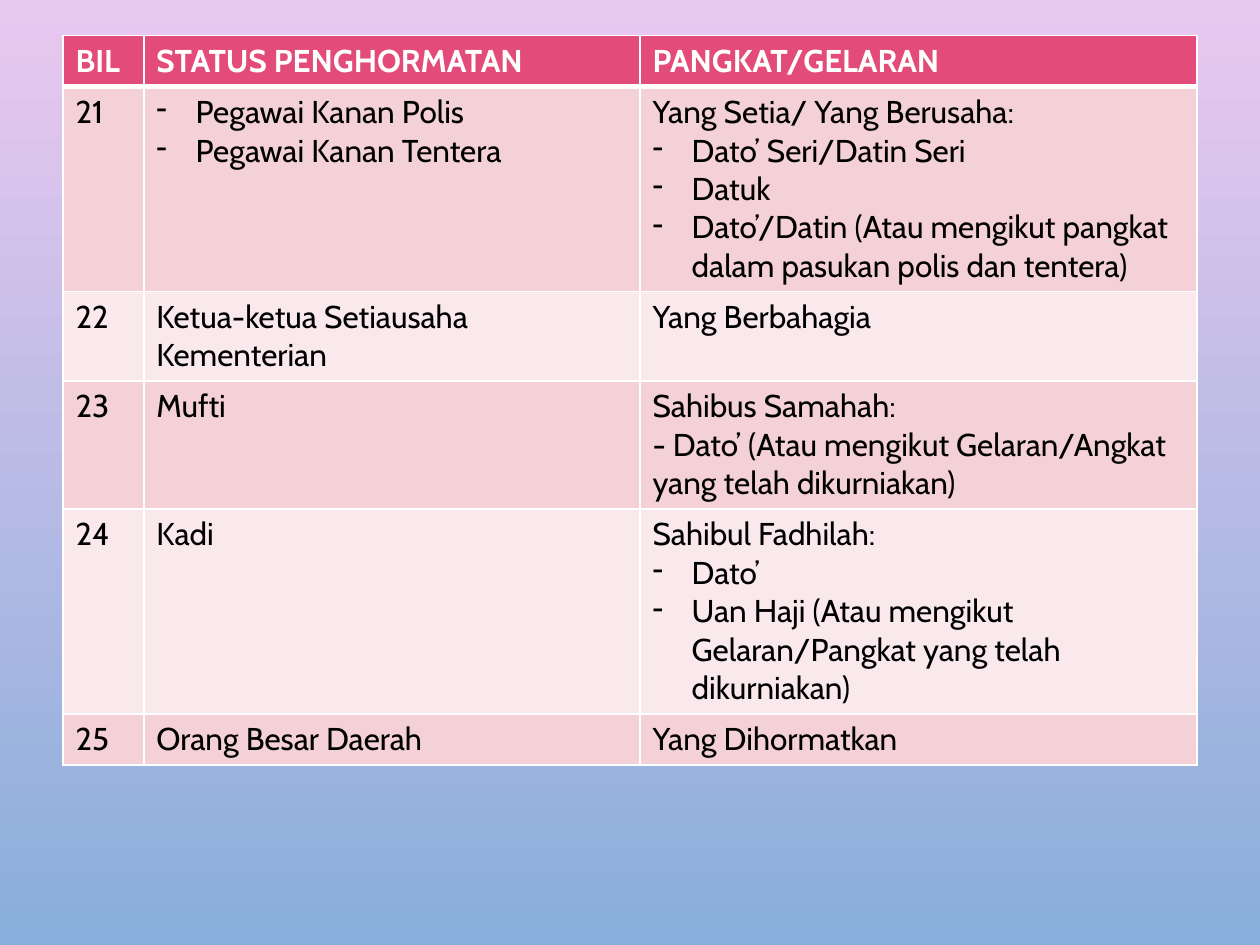
from dataclasses import dataclass

from lxml.etree import SubElement
from pptx import Presentation
from pptx.dml.color import RGBColor
from pptx.oxml.ns import qn
from pptx.slide import Slide
from pptx.util import Cm, Pt

WHITE = RGBColor(0xFF, 0xFF, 0xFF)
BLACK = RGBColor(0x00, 0x00, 0x00)
HEADER_PINK = RGBColor(0xE3, 0x4B, 0x7A)
ROW_PINKS = [RGBColor(0xF4, 0xD0, 0xD7), RGBColor(0xFA, 0xE9, 0xEC)]
SKY_PINK = RGBColor(0xE9, 0xC8, 0xEF)
SKY_BLUE = RGBColor(0x89, 0xAE, 0xDB)

BULLET = "• "  # marks a line to be drawn as a dash list item
HEADINGS = ["BIL", "STATUS PENGHORMATAN", "PANGKAT/GELARAN"]
RANKS = [
    [["21"],
     [BULLET + "Pegawai Kanan Polis", BULLET + "Pegawai Kanan Tentera"],
     ["Yang Setia/ Yang Berusaha:",
      BULLET + "Dato’ Seri/Datin Seri",
      BULLET + "Datuk",
      BULLET + "Dato’/Datin (Atau mengikut pangkat dalam pasukan polis dan tentera)"]],
    [["22"], ["Ketua-ketua Setiausaha Kementerian"], ["Yang Berbahagia"]],
    [["23"], ["Mufti"],
     ["Sahibus Samahah:",
      "- Dato’ (Atau mengikut Gelaran/Angkat yang telah dikurniakan)"]],
    [["24"], ["Kadi"],
     ["Sahibul Fadhilah:",
      BULLET + "Dato’",
      BULLET + "Uan Haji (Atau mengikut Gelaran/Pangkat yang telah dikurniakan)"]],
    [["25"], ["Orang Besar Daerah"], ["Yang Dihormatkan"]],
]


@dataclass
class SlideBuilder:
    slide: Slide
    font_name: str = "Cabin"
    font_size: int = 18

    def background(self, top_color, bottom_color):
        fill = self.slide.background.fill
        fill.gradient()
        fill.gradient_angle = 270
        for stop, color, position in zip(fill.gradient_stops, (top_color, bottom_color), (0, 1)):
            stop.color.rgb = color
            stop.position = position

    def table(self, headings, rows, left, top, height, column_widths, row_height):
        frame = self.slide.shapes.add_table(
            len(rows) + 1, len(headings), left, top, sum(column_widths), height)
        table = frame.table
        for column, width in zip(table.columns, column_widths):
            column.width = width
        for row in table.rows:
            row.height = row_height
        frame.height = height  # rows grow with their text
        for index, heading in enumerate(headings):
            self.cell(table.cell(0, index), [heading], HEADER_PINK, WHITE, bold=True, bottom=3)
        for row_index, row in enumerate(rows):
            for index, lines in enumerate(row):
                self.cell(table.cell(row_index + 1, index), lines, ROW_PINKS[row_index % 2],
                          BLACK, top=1 if row_index else 3)

    def cell(self, cell, lines, fill_color, text_color, bold=False, top=1, bottom=1):
        self.borders(cell, {"a:lnL": 1, "a:lnR": 1, "a:lnT": top, "a:lnB": bottom})
        cell.fill.solid()
        cell.fill.fore_color.rgb = fill_color
        text_frame = cell.text_frame
        for index, line in enumerate(lines):
            paragraph = text_frame.add_paragraph() if index else text_frame.paragraphs[0]
            paragraph.text = line.removeprefix(BULLET)
            if line.startswith(BULLET):
                self.dash_bullet(paragraph)
            font = paragraph.font
            font.name = self.font_name
            font.size = Pt(self.font_size)
            font.bold = bold
            font.color.rgb = text_color

    def borders(self, cell, widths):
        properties = cell._tc.get_or_add_tcPr()
        for tag, width in widths.items():
            line = SubElement(properties, qn(tag), w=str(Pt(width)))
            fill = SubElement(line, qn("a:solidFill"))
            SubElement(fill, qn("a:srgbClr"), val=str(WHITE))

    def dash_bullet(self, paragraph):
        properties = paragraph._p.get_or_add_pPr()
        indent = Cm(0.79)
        properties.set("marL", str(indent))
        properties.set("indent", str(-indent))
        SubElement(properties, qn("a:buChar"), char="-")


def main():
    presentation = Presentation()
    presentation.slide_width = Cm(25.4)
    presentation.slide_height = Cm(19.05)
    builder = SlideBuilder(presentation.slides.add_slide(presentation.slide_layouts[6]))
    builder.background(SKY_PINK, SKY_BLUE)
    builder.table(HEADINGS, RANKS, left=Cm(1.27), top=Cm(0.72), height=Cm(13.77),
                  column_widths=[Cm(1.63), Cm(10), Cm(11.23)], row_height=Cm(1.03))
    presentation.save("out.pptx")


if __name__ == "__main__":
    main()
